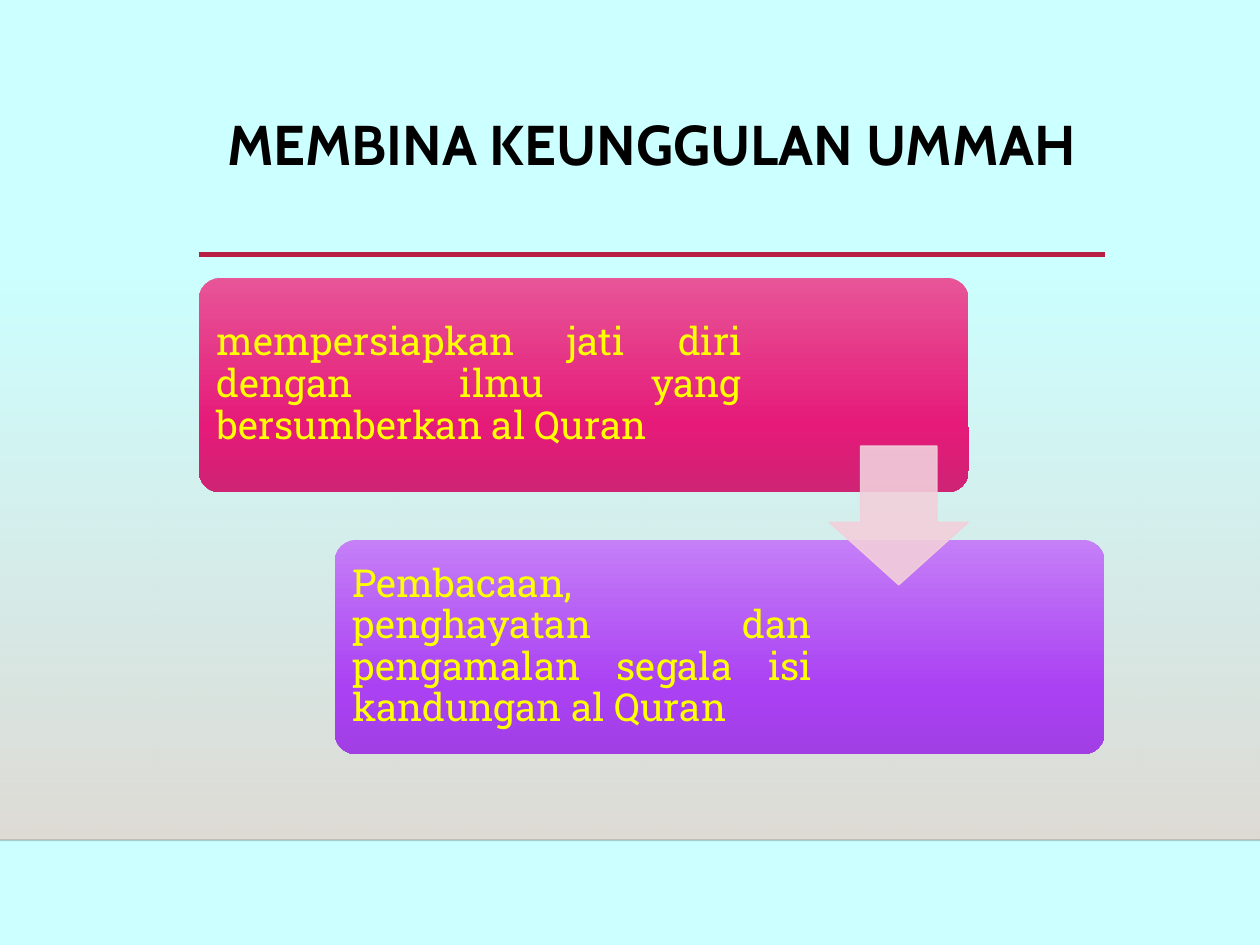
from dataclasses import dataclass

from lxml import etree
from pptx import Presentation
from pptx.dml.color import RGBColor
from pptx.enum.shapes import MSO_CONNECTOR, MSO_SHAPE
from pptx.enum.text import MSO_ANCHOR, PP_ALIGN
from pptx.oxml.ns import qn
from pptx.util import Pt

RECT = MSO_SHAPE.RECTANGLE
ROUND = MSO_SHAPE.ROUNDED_RECTANGLE
ARROW = MSO_SHAPE.DOWN_ARROW
STRAIGHT = MSO_CONNECTOR.STRAIGHT
TOP, MIDDLE = MSO_ANCHOR.TOP, MSO_ANCHOR.MIDDLE
CENTER, JUSTIFY = PP_ALIGN.CENTER, PP_ALIGN.JUSTIFY


@dataclass(frozen=True)
class Theme:
    background: str = "CCFFFF"
    haze: str = "DFDBD5"
    floor: str = "000001"
    rule: str = "B71E42"
    title: str = "000000"
    body: str = "FFFF00"
    arrow: str = "F2CFDB"
    pink: tuple = ("E75597", "E51A79", "CF2374")
    purple: tuple = ("C57FF7", "AA41F3", "A13FE5")
    title_font: str = "Cabin"
    body_font: str = "Roboto Slab"
    title_size: int = 32
    body_size: int = 22


THEME = Theme()
LEFT, RIGHT = 113.6, 631.3
CARD_W, CARD_H = 440, 122.5
CARD_TOP, CARD_STEP = 158.8, 149.7
CARD_PAD = 3.6


def rgb(value):
    return RGBColor.from_string(value)


def set_alpha(color_el, percent):
    etree.SubElement(color_el, qn("a:alpha")).set("val", str(percent * 1000))


def set_gradient(sp, stops):
    sp.fill.gradient()
    sp.fill.gradient_angle = 270
    gs_list = sp._element.spPr.find(qn("a:gradFill")).find(qn("a:gsLst"))
    for gs in list(gs_list):
        gs_list.remove(gs)
    for pos, color, alpha in stops:
        gs = etree.SubElement(gs_list, qn("a:gs"), pos=str(pos * 1000))
        clr = etree.SubElement(gs, qn("a:srgbClr"), val=color)
        if alpha < 100:
            set_alpha(clr, alpha)


def add_block(s, kind, x, y, w, h, adjustments=()):
    sp = s.shapes.add_shape(kind, Pt(x), Pt(y), Pt(w), Pt(h))
    sp.shadow.inherit = False
    sp.line.fill.background()
    for i, value in enumerate(adjustments):
        sp.adjustments[i] = value
    return sp


def add_rule(s, x1, x2, y, color, width, alpha=100):
    line = s.shapes.add_connector(STRAIGHT, Pt(x1), Pt(y), Pt(x2), Pt(y))
    line.line.color.rgb = rgb(color)
    line.line.width = Pt(width)
    sp_pr = line._element.spPr
    if alpha < 100:
        set_alpha(next(sp_pr.iter(qn("a:srgbClr"))), alpha)
    etree.SubElement(sp_pr, qn("a:effectLst"))


def add_text(s, x, y, w, h, text, font, size, color, align, anchor,
             inset=None, bold=False):
    tf = s.shapes.add_textbox(Pt(x), Pt(y), Pt(w), Pt(h)).text_frame
    tf.word_wrap = True
    tf.vertical_anchor = anchor
    if inset is not None:
        tf.margin_left = tf.margin_right = Pt(inset)
        tf.margin_top = tf.margin_bottom = Pt(inset)
    p = tf.paragraphs[0]
    p.alignment = align
    p.line_spacing = 0.9
    r = p.add_run()
    r.text = text
    r.font.name = font
    r.font.size = Pt(size)
    r.font.bold = bold
    r.font.color.rgb = rgb(color)


def add_card(s, x, y, colors, text, text_w):
    sp = add_block(s, ROUND, x, y, CARD_W, CARD_H, [0.1])
    set_gradient(sp, [(pos, c, 100) for pos, c in zip((0, 69, 100), colors)])
    add_text(s, x + CARD_PAD, y + CARD_PAD, text_w, CARD_H - 2 * CARD_PAD,
             text, THEME.body_font, THEME.body_size, THEME.body,
             JUSTIFY, MIDDLE, inset=6.6)


def add_arrow(s, x, y, size):
    sp = add_block(s, ARROW, x, y, size, size, [0.55, 0.45])
    sp.fill.solid()
    sp.fill.fore_color.rgb = rgb(THEME.arrow)
    sp.line.color.rgb = rgb(THEME.arrow)
    sp.line.width = Pt(0.75)
    for clr in sp._element.spPr.iter(qn("a:srgbClr")):
        set_alpha(clr, 90)


def main():
    prs = Presentation()
    prs.slide_width, prs.slide_height = Pt(720), Pt(540)
    s = prs.slides.add_slide(prs.slide_layouts[6])
    s.background.fill.solid()
    s.background.fill.fore_color.rgb = rgb(THEME.background)

    haze = add_block(s, RECT, 0, 158.7, 720, 321.3)
    set_gradient(haze, [(0, THEME.haze, 0), (100, THEME.haze, 100)])
    add_rule(s, 0, 720, 480.2, THEME.floor, 1, alpha=20)
    add_rule(s, LEFT, RIGHT, 145.5, THEME.rule, 2.5)

    add_text(s, LEFT, 63.2, RIGHT - LEFT, 82.5, "MEMBINA KEUNGGULAN UMMAH",
             THEME.title_font, THEME.title_size, THEME.title,
             CENTER, TOP, bold=True)
    add_card(s, LEFT, CARD_TOP, THEME.pink,
             "mempersiapkan jati diri dengan ilmu yang bersumberkan al Quran",
             313.2)
    add_card(s, RIGHT - CARD_W, CARD_TOP + CARD_STEP, THEME.purple,
             "Pembacaan, penghayatan dan pengamalan segala isi kandungan "
             "al Quran ", 275.8)
    add_arrow(s, 473.9, 254.8, 79.4)
    prs.save("out.pptx")


if __name__ == "__main__":
    main()
